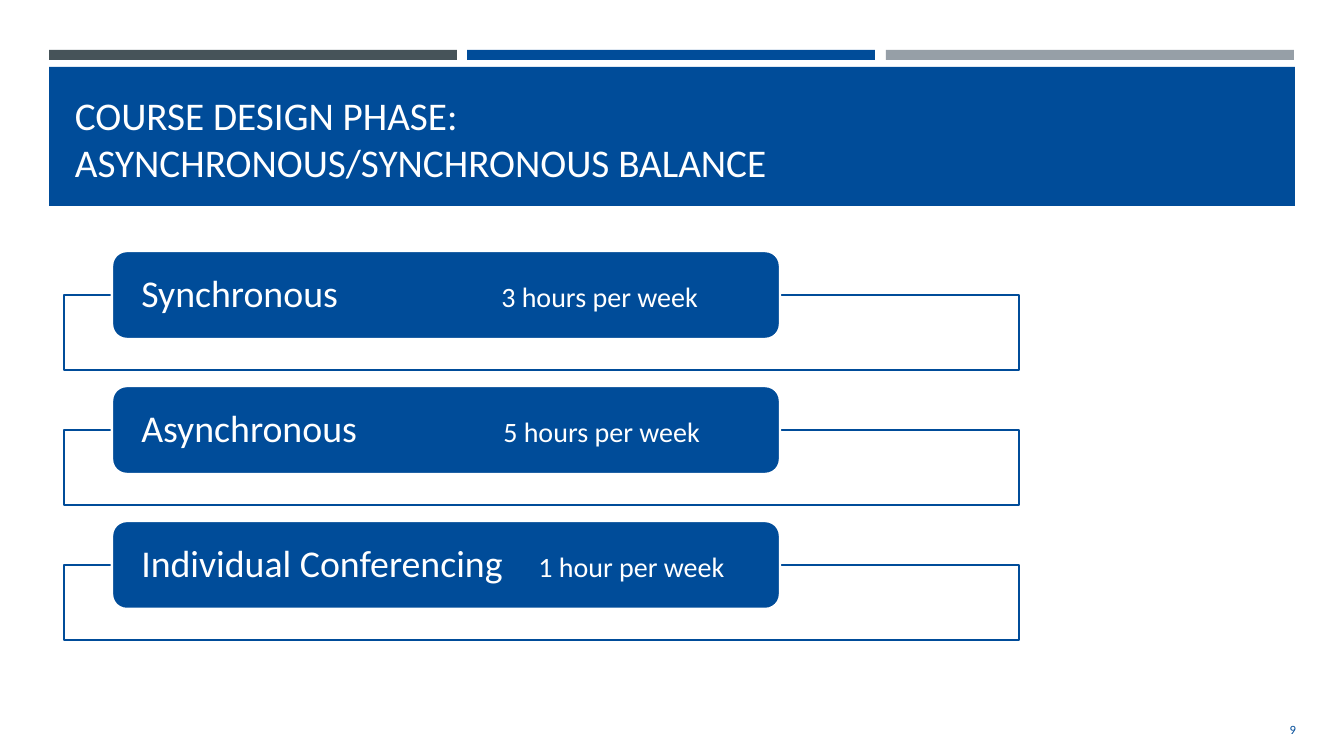
"""Builds the course design slide on the balance of asynchronous and synchronous hours."""
import dataclasses

import pptx
import pptx.dml.color
import pptx.enum.shapes
import pptx.enum.text
import pptx.oxml
import pptx.oxml.ns
import pptx.util

Shape = pptx.enum.shapes.MSO_SHAPE
Anchor = pptx.enum.text.MSO_ANCHOR
Align = pptx.enum.text.PP_ALIGN


@dataclasses.dataclass(frozen=True)
class Theme:
    font: str = "Calibri"
    blue: str = "004C99"
    slate: str = "465359"
    grey: str = "969FA7"
    white: str = "FFFFFF"
    title_size: int = 28
    label_size: int = 27
    hours_size: int = 20
    number_size: int = 9
    line_width: float = 1.75


def px(length):
    return pptx.util.Emu(round(length * 914400 / 100.8))


def rgb(value):
    return pptx.dml.color.RGBColor.from_string(value)


class SlideBuilder:
    def __init__(self, slide, theme):
        self.slide = slide
        self.theme = theme

    def box(self, kind, left, top, width, height, fill, line=None):
        shape = self.slide.shapes.add_shape(kind, px(left), px(top), px(width), px(height))
        shape.shadow.inherit = False
        shape.fill.solid()
        shape.fill.fore_color.rgb = rgb(fill)
        if line:
            shape.line.color.rgb = rgb(line)
            shape.line.width = pptx.util.Pt(self.theme.line_width)
        else:
            shape.line.fill.background()
        return shape

    def style_run(self, run, size, color):
        run.font.name = self.theme.font
        run.font.size = pptx.util.Pt(size)
        run.font.color.rgb = rgb(color)

    def text(self, left, top, width, height, content, size, color, anchor, align=Align.LEFT):
        shape = self.slide.shapes.add_textbox(px(left), px(top), px(width), px(height))
        frame = shape.text_frame
        frame.word_wrap = True
        frame.vertical_anchor = anchor
        frame.text = content
        paragraph = frame.paragraphs[0]
        paragraph.alignment = align
        for run in paragraph.runs:
            self.style_run(run, size, color)

    def session(self, top, label, hours, hours_offset):
        theme = self.theme
        self.box(Shape.RECTANGLE, 64, top + 44, 955, 75, theme.white, theme.blue)
        pill = self.box(Shape.ROUNDED_RECTANGLE, 112, top, 668, 88, theme.blue, theme.white)
        frame = pill.text_frame
        frame.word_wrap = True
        frame.vertical_anchor = Anchor.MIDDLE
        frame.margin_left = frame.margin_right = px(25)
        frame.margin_top = frame.margin_bottom = 0
        paragraph = frame.paragraphs[0]
        paragraph.text = label + "\t"
        paragraph.alignment = Align.LEFT
        paragraph.line_spacing = 0.9
        self.style_run(paragraph.runs[0], theme.label_size, theme.white)
        hours_run = paragraph.add_run()
        hours_run.text = hours
        self.style_run(hours_run, theme.hours_size, theme.white)
        paragraph._p.get_or_add_pPr().append(pptx.oxml.parse_xml(
            f'<a:tabLst {pptx.oxml.ns.nsdecls("a")}>'
            f'<a:tab pos="{px(hours_offset)}" algn="l"/></a:tabLst>'))


def main():
    presentation = pptx.Presentation()
    presentation.slide_width = px(1344)
    presentation.slide_height = px(756)
    theme = Theme()
    builder = SlideBuilder(presentation.slides.add_slide(presentation.slide_layouts[6]), theme)

    band_left, band_width, bar_gap = 49, 1246, 10
    for index, color in enumerate((theme.slate, theme.blue, theme.grey)):
        bar_left = band_left + index * (band_width + bar_gap) // 3
        builder.box(Shape.RECTANGLE, bar_left, 50, 408, 10, color)
    builder.box(Shape.RECTANGLE, band_left, 67, band_width, 139, theme.blue)
    builder.text(65, 81, 1195, 109, "COURSE DESIGN PHASE:\vASYNCHRONOUS/SYNCHRONOUS BALANCE",
                 theme.title_size, theme.white, Anchor.BOTTOM)

    sessions = (
        ("Synchronous", "3 hours per week", 360),
        ("Asynchronous", "5 hours per week", 362),
        ("Individual Conferencing", "1 hour per week", 397),
    )
    for index, (label, hours, hours_offset) in enumerate(sessions):
        builder.session(251 + index * 135, label, hours, hours_offset)

    builder.text(1190, 709, 116, 40, "9", theme.number_size, theme.blue,
                 Anchor.MIDDLE, Align.RIGHT)
    presentation.save("out.pptx")


if __name__ == "__main__":
    main()
